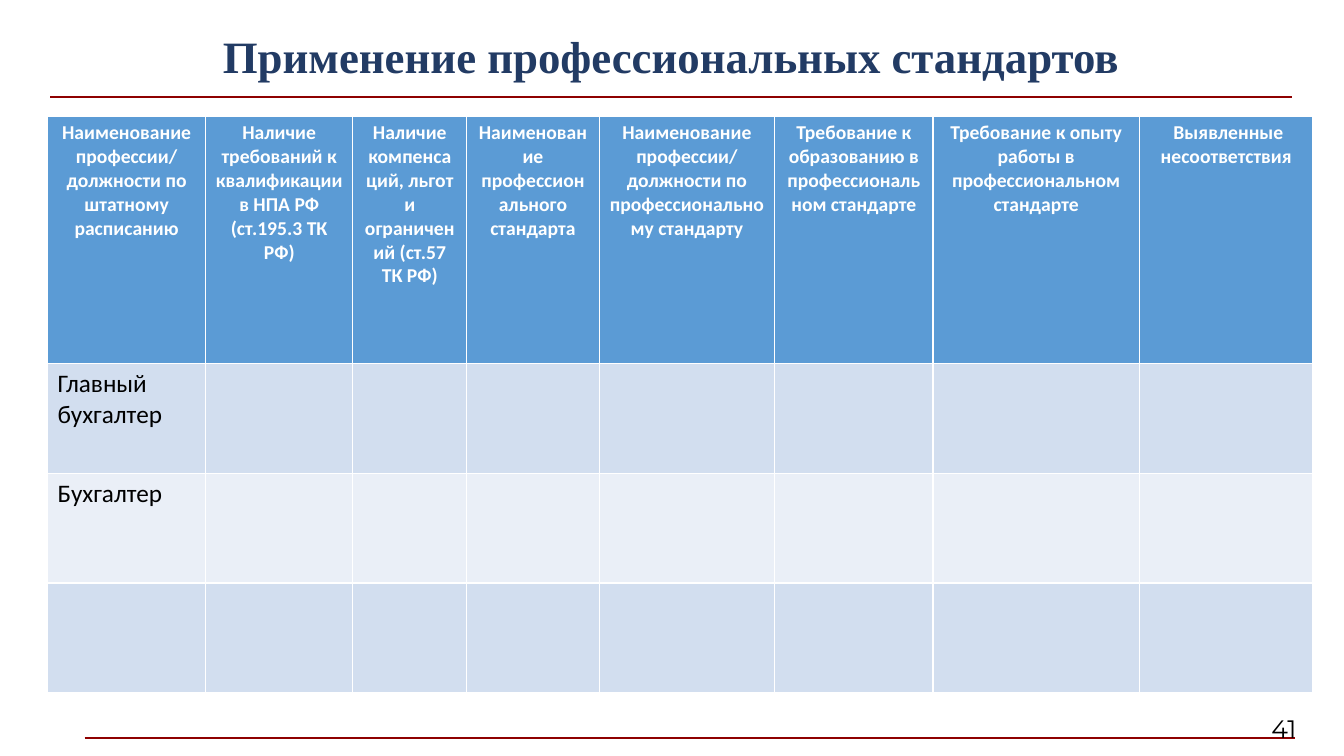
"""Builds the slide on applying professional standards."""
import lxml.etree
import pptx
import pptx.dml.color
import pptx.enum.shapes
import pptx.enum.text
import pptx.oxml.ns
import pptx.util

Pt = pptx.util.Pt
RGB = pptx.dml.color.RGBColor.from_string
ALIGN = pptx.enum.text.PP_ALIGN
MIDDLE = pptx.enum.text.MSO_ANCHOR.MIDDLE


class Theme:
    navy = RGB("223B64")
    rule = RGB("8E0000")
    header = RGB("5B9BD5")
    bands = (RGB("D2DEEF"), RGB("EAEFF7"))
    white = RGB("FFFFFF")
    black = RGB("000000")
    title_size = Pt(32)
    header_size = Pt(14)
    body_size = Pt(18)


def write(tf, text, font, size, color, bold=False, align=ALIGN.LEFT, spacing=None):
    for i, line in enumerate(text.split("\n")):
        p = tf.add_paragraph() if i else tf.paragraphs[0]
        p.alignment = align
        p.line_spacing = spacing
        r = p.add_run()
        r.text = line
        r.font.name = font
        r.font.size = size
        r.font.bold = bold
        r.font.color.rgb = color


prs = pptx.Presentation()
prs.slide_width, prs.slide_height = Pt(960), Pt(540)
s = prs.slides.add_slide(prs.slide_layouts[5])

for x1, x2, y in ((60.5, 925, 527), (36, 923, 69)):
    line = s.shapes.add_connector(pptx.enum.shapes.MSO_CONNECTOR.STRAIGHT, Pt(x1), Pt(y), Pt(x2), Pt(y))
    line.line.color.rgb = Theme.rule
    line.line.width = Pt(1.5)
    lxml.etree.SubElement(line._element.spPr, pptx.oxml.ns.qn("a:effectLst"))

title = s.shapes.title
title.left, title.top, title.width, title.height = Pt(34), Pt(16.5), Pt(891), Pt(51)
tf = title.text_frame
tf.auto_size = pptx.enum.text.MSO_AUTO_SIZE.NONE
tf.vertical_anchor = MIDDLE
tf.margin_left = tf.margin_right = 0
write(tf, "Применение профессиональных стандартов", font="Times New Roman", size=Theme.title_size,
      color=Theme.navy, bold=True, align=ALIGN.CENTER, spacing=0.9)

columns = (
    ("Наименование профессии/\nдолжности по штатному расписанию", 113),
    ("Наличие требований к квалификации в НПА РФ (ст.195.3 ТК РФ)", 105),
    ("Наличие компенсаций, льгот и ограничений (ст.57 ТК РФ)", 81.5),
    ("Наименование профессионального стандарта", 94.5),
    ("Наименование профессии/\nдолжности по профессиональному стандарту", 125.5),
    ("Требование к образованию в профессиональном стандарте", 113),
    ("Требование к опыту работы в профессиональном стандарте", 147.5),
    (" Выявленные несоответствия", 124),
)
positions = ("Главный бухгалтер", "Бухгалтер", "")
header_height, row_height = 176.5, 78.5

table = s.shapes.add_table(len(positions) + 1, len(columns), Pt(34), Pt(83), Pt(904),
                           Pt(header_height + row_height * len(positions))).table
table.rows[0].height = Pt(header_height)
for c, (heading, width) in enumerate(columns):
    table.columns[c].width = Pt(width)
    cell = table.cell(0, c)
    cell.fill.solid()
    cell.fill.fore_color.rgb = Theme.header
    write(cell.text_frame, heading, font="Calibri", size=Theme.header_size,
          color=Theme.white, bold=True, align=ALIGN.CENTER)

for i, position in enumerate(positions):
    table.rows[i + 1].height = Pt(row_height)
    for cell in table.rows[i + 1].cells:
        cell.fill.solid()
        cell.fill.fore_color.rgb = Theme.bands[i % 2]
    if position:
        write(table.cell(i + 1, 0).text_frame, position, font="Calibri",
              size=Theme.body_size, color=Theme.black)

number = s.shapes.add_textbox(Pt(883.5), Pt(505.5), Pt(42.5), Pt(29))
tf = number.text_frame
tf.word_wrap = True
tf.vertical_anchor = MIDDLE
tf.margin_left = tf.margin_right = tf.margin_top = tf.margin_bottom = 0
write(tf, "41", font="Montserrat", size=Theme.body_size, color=Theme.black, align=ALIGN.RIGHT)

prs.save("out.pptx")
